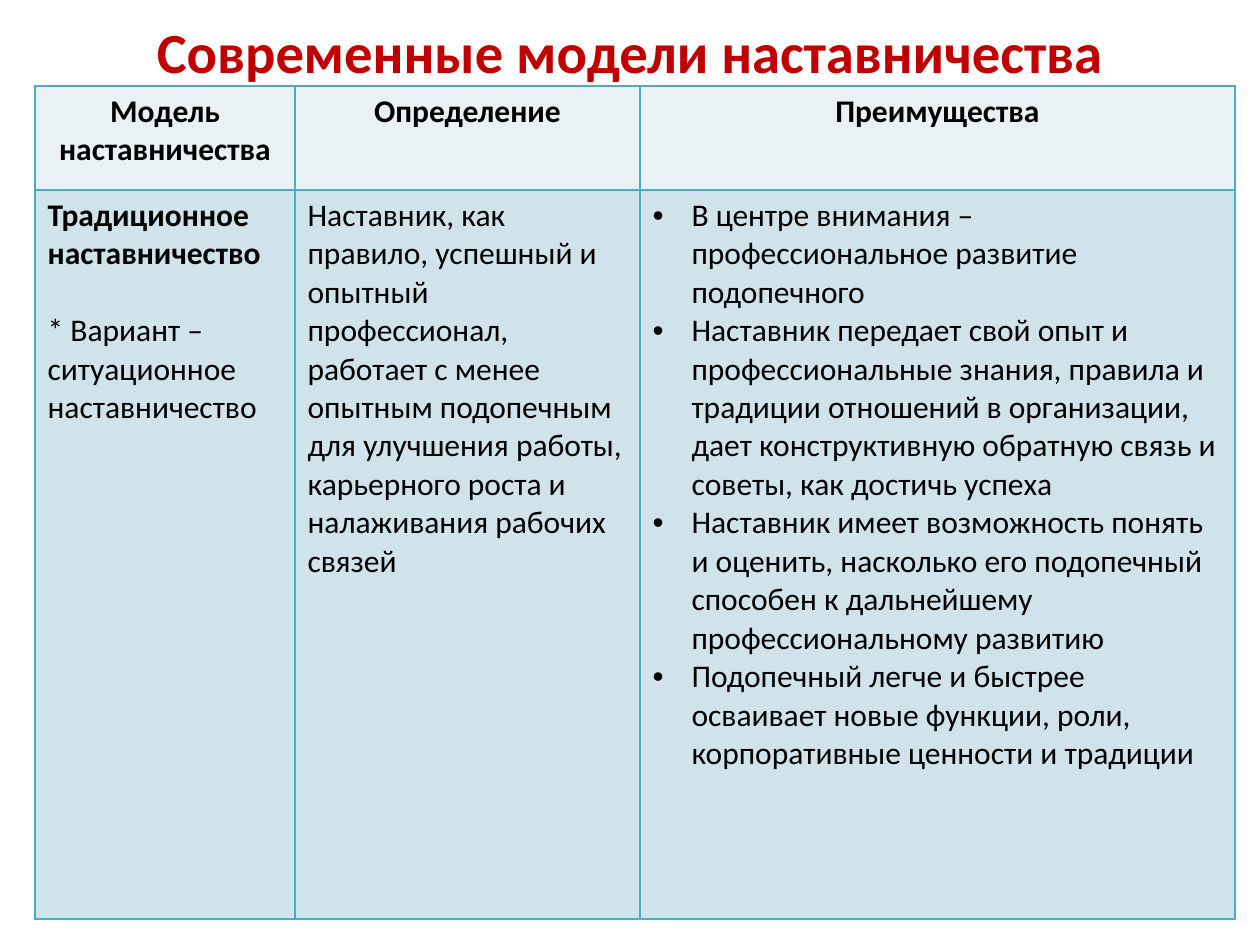
from lxml.etree import SubElement as Sub
from pptx import Presentation
from pptx.dml.color import RGBColor as RGB
from pptx.enum.text import MSO_ANCHOR as Anchor, MSO_AUTO_SIZE as Auto, PP_ALIGN as Align
from pptx.oxml.ns import qn
from pptx.util import Pt

# Content: each cell is a list of paragraphs (text, style)
TITLE = "Современные модели наставничества"
ROWS = [
    [
        [("Модель наставничества", "head")],
        [("Определение", "head")],
        [("Преимущества", "head")],
    ],
    [
        [("Традиционное наставничество", "bold"),
         ("* Вариант – ситуационное наставничество", "note")],
        [("Наставник, как правило, успешный и опытный профессионал, "
          "работает с менее опытным подопечным для улучшения работы, "
          "карьерного роста и налаживания рабочих связей", "body")],
        [("В центре внимания – профессиональное развитие подопечного", "item"),
         ("Наставник передает свой опыт и профессиональные знания, правила "
          "и традиции отношений в организации, дает конструктивную обратную "
          "связь и советы, как достичь успеха", "item"),
         ("Наставник имеет возможность понять и оценить, насколько его "
          "подопечный способен к дальнейшему профессиональному развитию", "item"),
         ("Подопечный легче и быстрее осваивает новые функции, роли, "
          "корпоративные ценности и традиции", "item")],
    ],
]

# Colours and sizes
RED = RGB(0xC0, 0x00, 0x00)
BLACK = RGB(0x00, 0x00, 0x00)
TEAL = RGB(0x4B, 0xAC, 0xC6)
FILLS = [RGB(0xE9, 0xF1, 0xF5), RGB(0xD0, 0xE3, 0xEA)]
COLS = [260, 345, 595]
HIGHS = [104, 729]
INDENT = 39

# Paragraph formats by style
STYLES = {
    "head": {"alignment": Align.CENTER},
    "bold": {"alignment": Align.LEFT},
    "note": {"alignment": Align.LEFT, "space_before": Pt(22)},
    "body": {"alignment": Align.LEFT},
    "item": {"alignment": Align.LEFT},
}


def px(n):
    return round(n * 914400 / 126)


def put(obj, vals):
    for key, val in vals.items():
        setattr(obj, key, val)


def write(para, text, size, bold, color):
    run = para.add_run()
    run.text = text
    put(run.font, {"name": "Calibri", "size": Pt(size), "bold": bold})
    run.font.color.rgb = color


def bullet(para):
    props = para._p.get_or_add_pPr()
    props.set("marL", str(px(INDENT)))
    props.set("indent", str(-px(INDENT)))
    Sub(props, qn("a:buFont")).set("typeface", "Arial")
    Sub(props, qn("a:buChar")).set("char", "•")


def border(cell):
    props = cell._tc.get_or_add_tcPr()
    for n, side in enumerate(("lnL", "lnR", "lnT", "lnB")):
        line = props.makeelement(qn("a:" + side), {"w": str(Pt(1))})
        props.insert(n, line)
        fill = Sub(line, qn("a:solidFill"))
        Sub(fill, qn("a:srgbClr")).set("val", str(TEAL))


def fill_cell(cell, paras, color):
    cell.fill.solid()
    cell.fill.fore_color.rgb = color
    border(cell)
    frame = cell.text_frame
    for n, (text, style) in enumerate(paras):
        para = frame.add_paragraph() if n else frame.paragraphs[0]
        put(para, STYLES[style])
        if style == "item":
            bullet(para)
        write(para, text, 18, style in ("head", "bold"), BLACK)


def main():
    deck = Presentation()
    put(deck, {"slide_width": px(1260), "slide_height": px(945)})
    slide = deck.slides.add_slide(deck.slide_layouts[6])

    # Title
    box = slide.shapes.add_textbox(px(63), px(26), px(1134), px(49))
    frame = box.text_frame
    put(frame, {"word_wrap": True, "auto_size": Auto.NONE,
                "vertical_anchor": Anchor.MIDDLE})
    para = frame.paragraphs[0]
    para.alignment = Align.CENTER
    write(para, TITLE, 32.4, True, RED)

    # Table of models
    table = slide.shapes.add_table(
        len(ROWS), len(COLS), px(35), px(86),
        px(sum(COLS)), px(sum(HIGHS))).table
    for col, wide in zip(table.columns, COLS):
        col.width = px(wide)
    for r, (row, high) in enumerate(zip(ROWS, HIGHS)):
        table.rows[r].height = px(high)
        for c, paras in enumerate(row):
            fill_cell(table.cell(r, c), paras, FILLS[r])

    deck.save("out.pptx")


if __name__ == "__main__":
    main()
